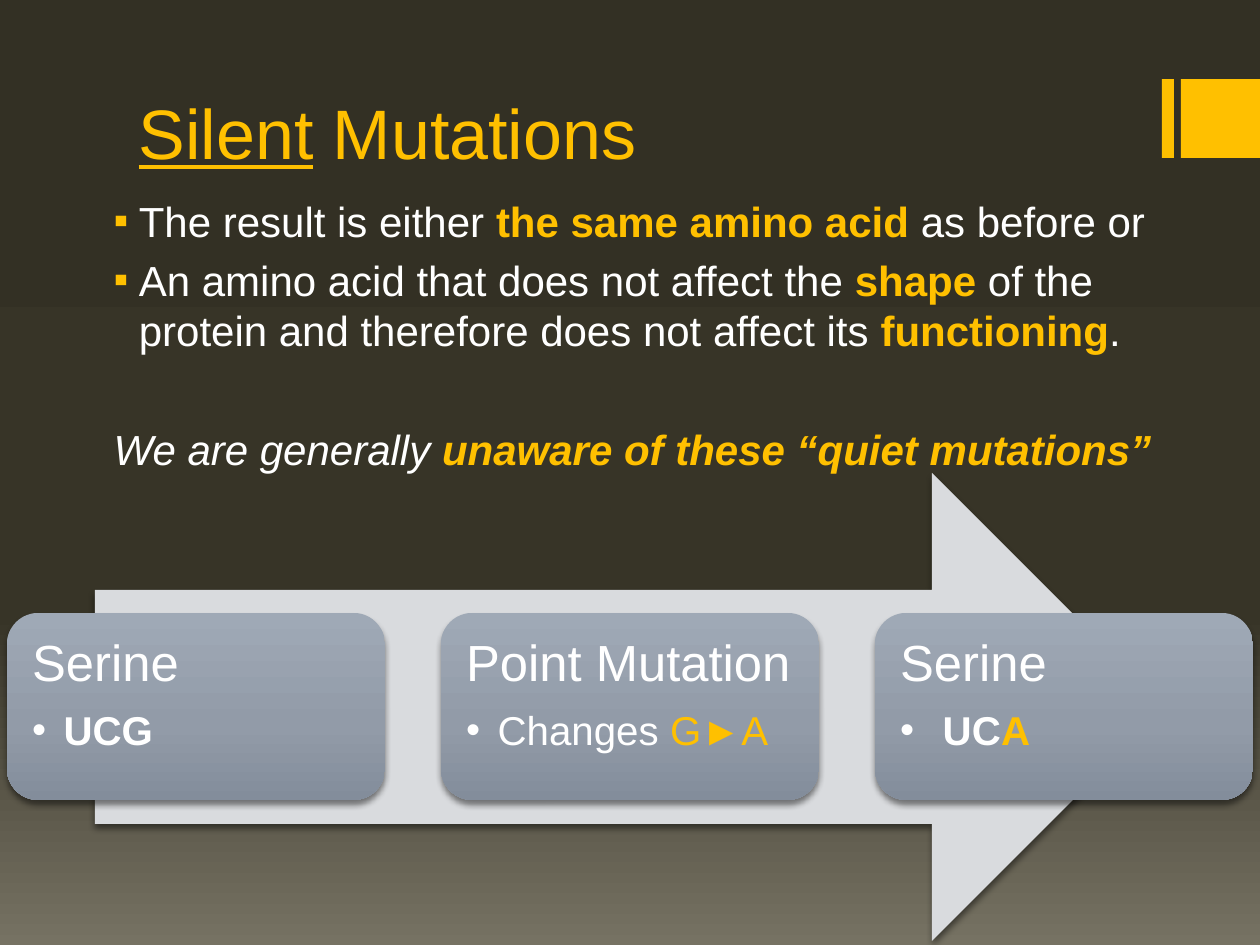
from lxml.etree import SubElement
from pptx import Presentation
from pptx.dml.color import RGBColor
from pptx.enum.shapes import MSO_SHAPE
from pptx.enum.text import MSO_ANCHOR, PP_ALIGN
from pptx.oxml.ns import qn
from pptx.util import Emu, Pt

SCALE = 914400 / 126
COLORS = {
    "gold": "FFC000",
    "white": "FFFFFF",
    "arrow": "D9DBDE",
    "shadow": "000000",
}
BACKGROUND_STOPS = [(0, "333024"), (65, "373427"), (100, "767263")]
CARD_STOPS = [(0, "9FA9B6"), (60, "929BA8"), (100, "838D9B")]


def set_gradient(fill, element, stops):
    fill.gradient()
    fill.gradient_angle = 270
    stop_list = next(element.iter(qn("a:gsLst")))
    for stop in list(stop_list):
        stop_list.remove(stop)
    for position, color in stops:
        stop = SubElement(stop_list, qn("a:gs"), pos=str(position * 1000))
        SubElement(stop, qn("a:srgbClr"), val=color)


def write_spans(para, spans, size):
    for text, color, bold, italic in spans:
        span = para.add_run()
        span.text = text
        span.font.name = "Arial"
        span.font.size = Pt(size)
        span.font.bold = bold
        span.font.italic = italic
        span.font.color.rgb = RGBColor.from_string(COLORS[color])


deck = Presentation()
deck.slide_width, deck.slide_height = Emu(9144000), Emu(6858000)
page = deck.slides.add_slide(deck.slide_layouts[5])
set_gradient(page.background.fill, page._element, BACKGROUND_STOPS)

for left, width in [(1162, 12), (1181, 79)]:
    bar = page.shapes.add_shape(
        MSO_SHAPE.RECTANGLE, *[Emu(round(n * SCALE)) for n in (left, 79, width, 79)]
    )
    bar.shadow.inherit = False
    bar.fill.solid()
    bar.fill.fore_color.rgb = RGBColor.from_string(COLORS["gold"])
    bar.line.fill.background()

title = page.shapes.title
title.left, title.top, title.width, title.height = [
    Emu(round(n * SCALE)) for n in (126, 21, 1008, 159)
]
title.text_frame.vertical_anchor = MSO_ANCHOR.BOTTOM
para = title.text_frame.paragraphs[0]
para.alignment = PP_ALIGN.LEFT
write_spans(
    para,
    [("Silent", "gold", False, False), (" Mutations", "gold", False, False)],
    40,
)
para.runs[0].font.underline = True

body = page.shapes.add_textbox(*[Emu(round(n * SCALE)) for n in (95, 189, 1071, 290)])
body.text_frame.word_wrap = True
body_paragraphs = [
    (True, 0, [
        ("The result is either ", "white", False, False),
        ("the same amino acid ", "gold", True, False),
        ("as before or", "white", False, False),
    ]),
    (True, 5, [
        ("An amino acid that does not affect the ", "white", False, False),
        ("shape", "gold", True, False),
        (" of the protein and therefore does not affect its ", "white", False, False),
        ("functioning", "gold", True, False),
        (".", "white", False, False),
    ]),
    (False, 39, [
        ("We are generally ", "white", False, True),
        ("unaware of these “quiet mutations”", "gold", True, True),
    ]),
]
for index, (bulleted, space, spans) in enumerate(body_paragraphs):
    para = body.text_frame.add_paragraph() if index else body.text_frame.paragraphs[0]
    para.space_before = Pt(space)
    properties = para._p.get_or_add_pPr()
    properties.set("marL", "228600" if bulleted else "45720")
    properties.set("indent", "-182880" if bulleted else "0")
    if bulleted:
        bullet_color = SubElement(properties, qn("a:buClr"))
        SubElement(bullet_color, qn("a:srgbClr"), val=COLORS["gold"])
        SubElement(properties, qn("a:buFont"), typeface="Arial")
        SubElement(properties, qn("a:buChar"), char="▪")
    write_spans(para, spans, 24)

arrow = page.shapes.add_shape(
    MSO_SHAPE.RIGHT_ARROW, *[Emu(round(n * SCALE)) for n in (95, 473, 1071, 468)]
)
arrow.fill.solid()
arrow.fill.fore_color.rgb = RGBColor.from_string(COLORS["arrow"])
process_shapes = [arrow]

cards = [
    ("Serine", [("UCG", "white", True, False)]),
    ("Point Mutation", [
        ("Changes ", "white", False, False),
        ("G►A", "gold", False, False),
    ]),
    ("Serine", [(" UC", "white", True, False), ("A", "gold", True, False)]),
]
for index, (heading, spans) in enumerate(cards):
    card = page.shapes.add_shape(
        MSO_SHAPE.ROUNDED_RECTANGLE,
        *[Emu(round(n * SCALE)) for n in (7 + 434 * index, 613, 378, 187)],
    )
    set_gradient(card.fill, card._element, CARD_STOPS)
    process_shapes.append(card)
    frame = card.text_frame
    frame.word_wrap = True
    frame.vertical_anchor = MSO_ANCHOR.TOP
    frame.margin_left = frame.margin_top = Emu(round(16 * SCALE))
    frame.margin_right = frame.margin_bottom = Emu(round(8 * SCALE))
    para = frame.paragraphs[0]
    para.space_after = Pt(10)
    write_spans(para, [(heading, "white", False, False)], 29)
    item = frame.add_paragraph()
    item.level = 1
    properties = item._p.get_or_add_pPr()
    properties.set("marL", "228600")
    properties.set("indent", "-228600")
    SubElement(properties, qn("a:buFont"), typeface="Arial")
    SubElement(properties, qn("a:buChar"), char="•")
    write_spans(item, spans, 23)
    for para in frame.paragraphs:
        para.alignment = PP_ALIGN.LEFT
        para.line_spacing = 0.9

for shape in process_shapes:
    shape.line.fill.background()
    shape.shadow.inherit = False
    effects = shape._element.spPr.find(qn("a:effectLst"))
    shadow = SubElement(
        effects, qn("a:outerShdw"),
        blurRad="48260", dist="38100", dir="5400000", rotWithShape="0",
    )
    shadow_color = SubElement(shadow, qn("a:srgbClr"), val=COLORS["shadow"])
    SubElement(shadow_color, qn("a:alpha"), val="48000")

deck.save("out.pptx")
